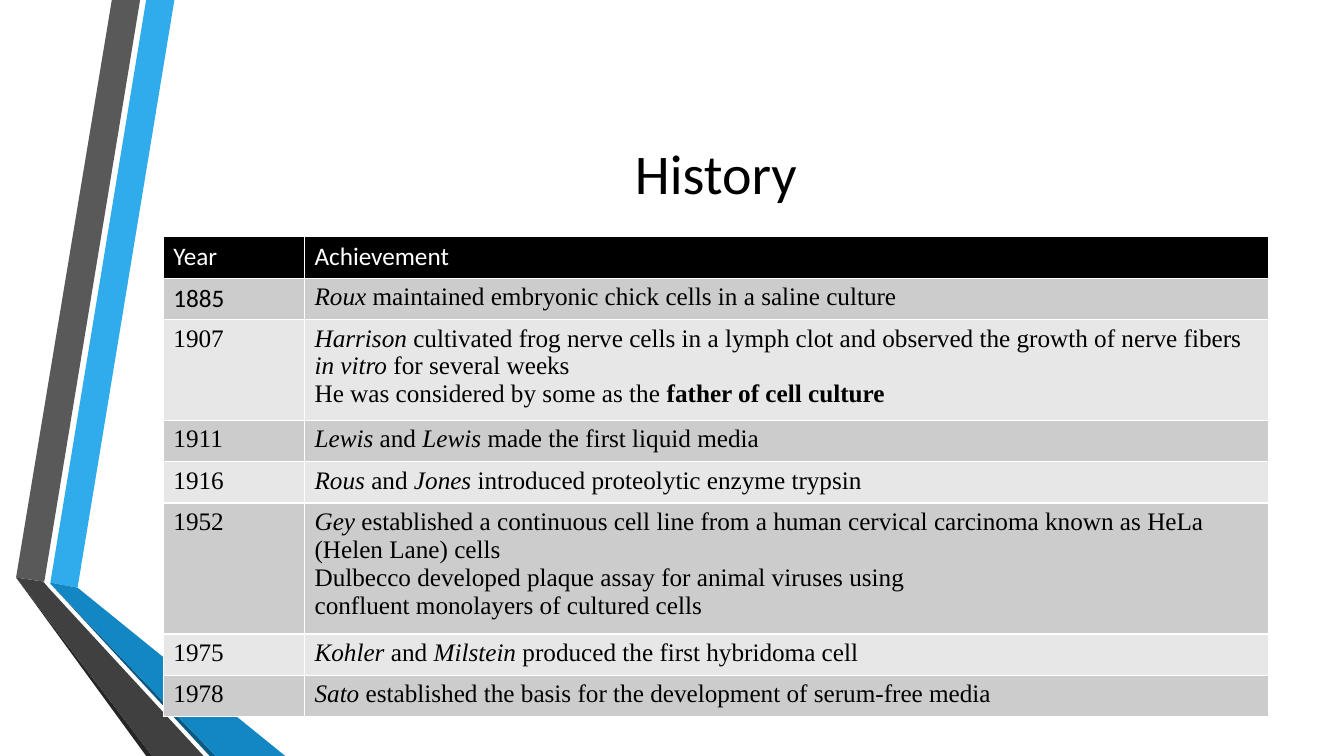
"""Build the slide on the history of cell culture."""
from lxml import etree
from pptx import Presentation
from pptx.dml.color import RGBColor
from pptx.enum.text import MSO_ANCHOR, PP_ALIGN
from pptx.oxml.ns import qn
from pptx.util import Inches, Pt

CENTER = PP_ALIGN.CENTER
MIDDLE = MSO_ANCHOR.MIDDLE
SANS, SERIF = "Calibri", "Times New Roman"
BLACK, WHITE = "000000", "FFFFFF"
BANDS = ("CCCCCC", "E7E7E7")
ITALIC, BOLD = {"italic": True}, {"bold": True}

RIBBONS = [
    ("30ACEC", [(0.5, 5.78), (0.77, 5.83), (1.73, 0), (1.45, 0)]),
    ("595959", [(1.39, 0), (1.11, 0), (0.16, 5.73), (0.44, 5.77)]),
    ("262626", [(0.16, 5.73), (1.45, 7.5), (1.51, 7.5)]),
    ("0C5A82", [(0.5, 5.79), (2.08, 7.5), (2.14, 7.5)]),
    ("1287C3", [(0.5, 5.79), (2.14, 7.5), (2.83, 7.5), (0.77, 5.83), (0.5, 5.78)]),
    ("404040", [(2.02, 7.5), (0.48, 5.83), (0.43, 5.77), (0.16, 5.73), (1.51, 7.5)]),
]

HISTORY = [
    ("1885", [[("Roux", ITALIC), (" maintained embryonic chick cells in a saline culture", {})]]),
    ("1907", [
        [("Harrison", ITALIC),
         (" cultivated frog nerve cells in a lymph clot and observed the growth of nerve fibers ", {}),
         ("in vitro ", ITALIC), ("for several weeks", {})],
        [("He was considered by some as the ", {}), ("father of cell culture", BOLD)],
    ]),
    ("1911", [[("Lewis", ITALIC), (" and ", {}), ("Lewis", ITALIC),
               (" made the first liquid media", {})]]),
    ("1916", [[("Rous", ITALIC), (" and ", {}), ("Jones", ITALIC),
               (" introduced proteolytic enzyme trypsin", {})]]),
    ("1952", [
        [("Gey", ITALIC),
         (" established a continuous cell line from a human cervical carcinoma"
          " known as HeLa (Helen Lane) cells", {})],
        [("Dulbecco developed plaque assay for animal viruses using", {})],
        [("confluent monolayers of cultured cells", {})],
    ]),
    ("1975", [[("Kohler", ITALIC), (" and ", {}), ("Milstein", ITALIC),
               (" produced the first hybridoma cell", {})]]),
    ("1978", [[("Sato", ITALIC),
               (" established the basis for the development of serum-free media", {})]]),
]


def rgb(value):
    return RGBColor.from_string(value)


class SlideBuilder:
    """Hold the text style and the current slide."""

    def __init__(self, slide, size=18):
        self.slide = slide
        self.size = size

    def fill_text(self, tf, paragraphs, font, color, size=None, align=None):
        for n, runs in enumerate(paragraphs):
            p = tf.add_paragraph() if n else tf.paragraphs[0]
            p.alignment = align
            for text, extra in runs:
                r = p.add_run()
                r.text = text
                r.font.color.rgb = rgb(color)
                base = {"name": font, "size": Pt(size or self.size),
                        "bold": False, "italic": False}
                for key, value in {**base, **extra}.items():
                    setattr(r.font, key, value)

    def ribbon(self, color, points):
        corners = [(Inches(x), Inches(y)) for x, y in points]
        fb = self.slide.shapes.build_freeform(*corners[0])
        fb.add_line_segments(corners[1:], close=True)
        sp = fb.convert_to_shape()
        sp.shadow.inherit = False
        sp.fill.solid()
        sp.fill.fore_color.rgb = rgb(color)
        sp.line.fill.background()

    def title(self, text, x, y, w, h):
        sp = self.slide.shapes.add_textbox(Inches(x), Inches(y), Inches(w), Inches(h))
        tf = sp.text_frame
        tf.word_wrap = True
        tf.vertical_anchor = MIDDLE
        self.fill_text(tf, [[(text, {})]], SANS, BLACK, 40, CENTER)

    def cell(self, cell, paragraphs, fill, font, color):
        cell.fill.solid()
        cell.fill.fore_color.rgb = rgb(fill)
        self.fill_text(cell.text_frame, paragraphs, font, color)
        tc_pr = cell._tc.get_or_add_tcPr()
        for n, side in enumerate(("lnL", "lnR", "lnT", "lnB")):
            ln = etree.Element(qn(f"a:{side}"), w=str(Pt(1)))
            solid = etree.SubElement(ln, qn("a:solidFill"))
            etree.SubElement(solid, qn("a:srgbClr"), val=WHITE)
            tc_pr.insert(n, ln)

    def table(self, header, rows, x, y, widths, row_height):
        count = len(rows) + 1
        table = self.slide.shapes.add_table(
            count, len(widths), Inches(x), Inches(y),
            Inches(sum(widths)), Inches(row_height * count)).table
        for column, width in zip(table.columns, widths):
            column.width = Inches(width)
        for n, text in enumerate(header):
            self.cell(table.cell(0, n), [[(text, {})]], BLACK, SANS, WHITE)
        for n, (year, achievement) in enumerate(rows):
            fill = BANDS[n % 2]
            year_font = SERIF if n else SANS
            self.cell(table.cell(n + 1, 0), [[(year, {})]], fill, year_font, BLACK)
            self.cell(table.cell(n + 1, 1), achievement, fill, SERIF, BLACK)


def main():
    prs = Presentation()
    prs.slide_width, prs.slide_height = Inches(13.33), Inches(7.5)
    s = SlideBuilder(prs.slides.add_slide(prs.slide_layouts[6]))
    for color, points in RIBBONS:
        s.ribbon(color, points)
    s.title("History", 1.62, 0.75, 10.96, 1.92)
    s.table(("Year", "Achievement"), HISTORY, 1.62, 2.35, (1.4, 9.56), 0.41)
    prs.save("out.pptx")


if __name__ == "__main__":
    main()
